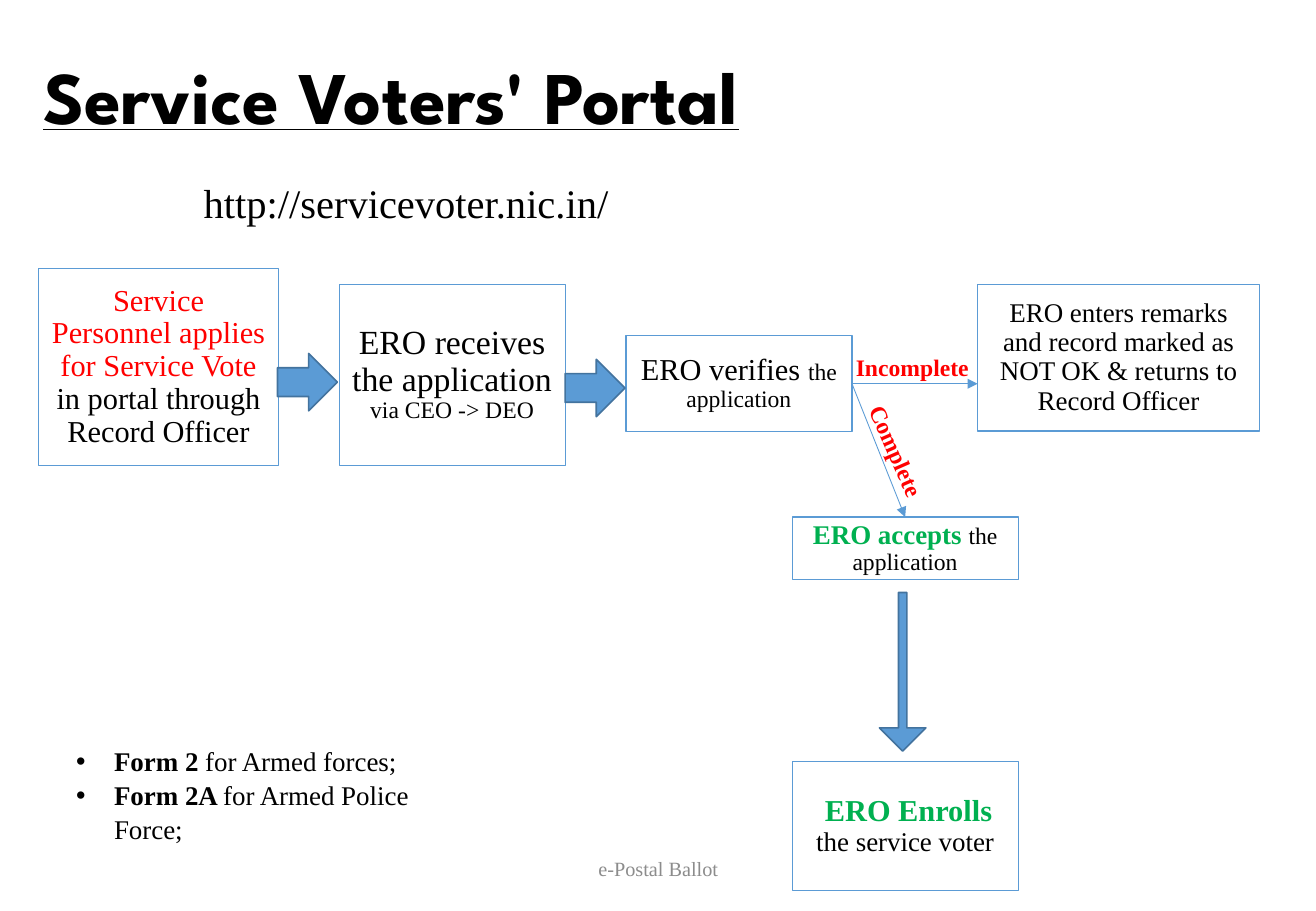
from dataclasses import dataclass

import pptx
import pptx.dml.color
import pptx.enum.shapes
import pptx.enum.text
import pptx.oxml
import pptx.oxml.ns
import pptx.util

Pt = pptx.util.Pt
ALIGN = pptx.enum.text.PP_ALIGN
ANCHOR = pptx.enum.text.MSO_ANCHOR
SHAPE = pptx.enum.shapes.MSO_SHAPE

COLORS = {
    "black": "000000",
    "red": "FF0000",
    "green": "00B050",
    "grey": "8C8C8C",
    "blue": "5B9BD5",
    "dark blue": "43739E",
}
TOP, LEFT, BOTTOM, RIGHT = range(4)


@dataclass
class Span:
    text: str
    size: float
    color: str = "black"
    bold: bool = False
    underline: bool = False
    font: str = "Times New Roman"


@dataclass
class Step:
    name: str
    frame: tuple[float, float, float, float]
    spans: list[Span]


@dataclass
class BlockArrow:
    frame: tuple[float, float, float, float]
    rotation: float = 0
    shaft: float = 0.5


STEPS = [
    Step("apply", (23, 159, 142, 117), [
        Span("Service Personnel applies for Service Vote", 18, "red"),
        Span(" in portal through Record Officer", 18)]),
    Step("receive", (201, 168.5, 134, 107.5), [
        Span("ERO receives the application", 20),
        Span(" via CEO -> DEO", 14)]),
    Step("verify", (371, 199, 134, 57), [
        Span("ERO verifies ", 18), Span("the application", 14)]),
    Step("return", (579.5, 168.5, 167, 87), [
        Span("ERO enters remarks and record marked as NOT OK & returns to Record Officer", 16)]),
    Step("accept", (469.5, 306.5, 134, 37), [
        Span("ERO accepts ", 16, "green", True), Span("the application", 14)]),
    Step("enroll", (469.5, 451.5, 134, 76.5), [
        Span(" ", 16), Span("ERO Enrolls", 18, "green", True),
        Span(" the service voter", 16)]),
]

BLOCK_ARROWS = [
    BlockArrow((164.5, 209.5, 35.5, 34)),
    BlockArrow((335, 213, 35.5, 34)),
    BlockArrow((488, 384.5, 94, 27.5), rotation=90, shaft=0.18),
]


def rgb(name: str) -> pptx.dml.color.RGBColor:
    return pptx.dml.color.RGBColor.from_string(COLORS[name])


def write(box, *paragraphs: list[Span], align=ALIGN.CENTER, anchor=ANCHOR.TOP,
          spacing: float = 0.9, bullet_indent: float = 0) -> None:
    """Fill a shape with paragraphs, bulleted when bullet_indent is given."""
    frame = box.text_frame
    frame.word_wrap = True
    frame.vertical_anchor = anchor
    for index, spans in enumerate(paragraphs):
        para = frame.add_paragraph() if index else frame.paragraphs[0]
        para.alignment = align
        para.line_spacing = spacing
        for span in spans:
            run = para.add_run()
            run.text = span.text
            run.font.name = span.font
            run.font.size = Pt(span.size)
            run.font.bold = span.bold
            run.font.underline = span.underline
            run.font.color.rgb = rgb(span.color)
        if bullet_indent:
            properties = para._p.get_or_add_pPr()
            properties.set("marL", str(Pt(bullet_indent)))
            properties.set("indent", str(-Pt(bullet_indent)))
            namespace = pptx.oxml.ns.nsdecls("a")
            for tag in (f'<a:buFont {namespace} typeface="Arial"/>',
                        f'<a:buChar {namespace} char="•"/>'):
                properties.append(pptx.oxml.parse_xml(tag))


def add_text(page, frame: tuple[float, float, float, float], *paragraphs: list[Span],
             rotation: float = 0, **layout) -> None:
    box = page.shapes.add_textbox(*map(Pt, frame))
    box.rotation = rotation
    write(box, *paragraphs, **layout)


def add_step(page, step: Step):
    box = page.shapes.add_shape(SHAPE.RECTANGLE, *map(Pt, step.frame))
    box.shadow.inherit = False
    box.fill.background()
    box.line.color.rgb = rgb("blue")
    box.line.width = Pt(0.75)
    write(box, step.spans, anchor=ANCHOR.MIDDLE)
    return box


def add_block_arrow(page, arrow: BlockArrow) -> None:
    shape = page.shapes.add_shape(SHAPE.RIGHT_ARROW, *map(Pt, arrow.frame))
    shape.shadow.inherit = False
    shape.rotation = arrow.rotation
    shape.adjustments[0] = arrow.shaft
    shape.fill.solid()
    shape.fill.fore_color.rgb = rgb("blue")
    shape.line.color.rgb = rgb("dark blue")
    shape.line.width = Pt(1)


def add_branch(page, source, end: tuple[float, float]):
    """Draw a thin arrow from the right side of the source box."""
    line = page.shapes.add_connector(
        pptx.enum.shapes.MSO_CONNECTOR.STRAIGHT, 0, 0, *map(Pt, end))
    line.begin_connect(source, RIGHT)
    line.line.color.rgb = rgb("blue")
    line.line.width = Pt(0.5)
    namespace = pptx.oxml.ns.nsdecls("a")
    line.line._get_or_add_ln().append(
        pptx.oxml.parse_xml(f'<a:tailEnd {namespace} type="triangle"/>'))
    line._element.spPr.append(pptx.oxml.parse_xml(f"<a:effectLst {namespace}/>"))
    return line


def main() -> None:
    deck = pptx.Presentation()
    deck.slide_width, deck.slide_height = Pt(780), Pt(540)
    page = deck.slides.add_slide(deck.slide_layouts[6])

    add_text(page, (18.5, 32.5, 503.5, 62),
             [Span("Service Voters'\u00a0Portal", 44, bold=True, underline=True,
                   font="League Spartan")], align=ALIGN.LEFT)
    add_text(page, (111.5, 105, 258.5, 34), [Span("http://servicevoter.nic.in/", 24)])

    boxes = {step.name: add_step(page, step) for step in STEPS}
    for arrow in BLOCK_ARROWS:
        add_block_arrow(page, arrow)

    add_branch(page, boxes["verify"], (579.5, 227.5))
    accepted = add_branch(page, boxes["verify"], (536.5, 306.5))
    accepted.end_connect(boxes["accept"], TOP)
    add_text(page, (496, 207.5, 89.5, 21.5), [Span("Incomplete", 14, "red", True)])
    add_text(page, (494, 258.5, 78.5, 16), [Span("Complete", 14, "red", True)],
             rotation=66.4)

    add_text(page, (258.5, 500.5, 263.5, 29), [Span("e-Postal Ballot", 12, "grey")],
             anchor=ANCHOR.MIDDLE, spacing=1.0)
    add_text(page, (38, 437, 252.5, 65.5),
             [Span("Form 2 ", 16, bold=True), Span("for Armed forces;", 16)],
             [Span("Form 2A ", 16, bold=True), Span("for Armed Police Force;", 16)],
             align=ALIGN.LEFT, spacing=1.05, bullet_indent=22.5)
    deck.save("out.pptx")


if __name__ == "__main__":
    main()
